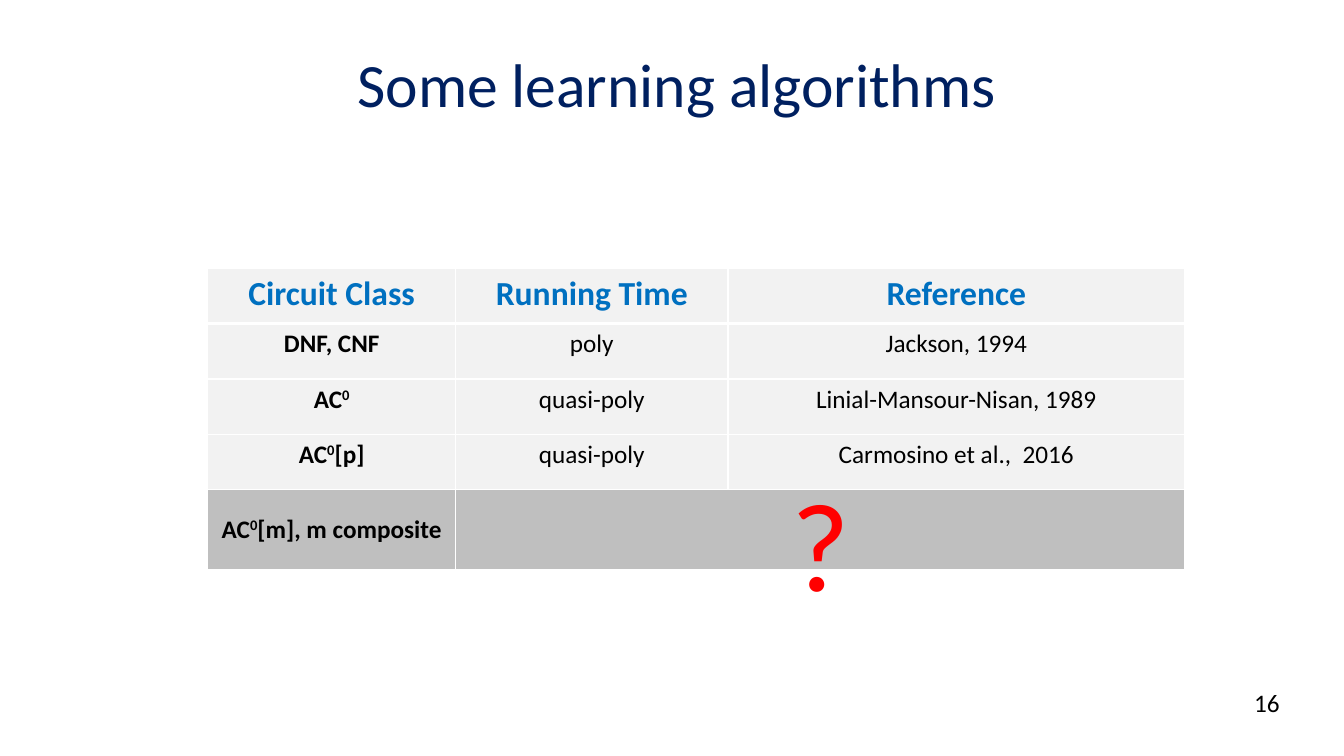
from lxml.etree import SubElement
from pptx import Presentation
from pptx.dml.color import RGBColor
from pptx.enum.text import MSO_ANCHOR as Anchor, PP_ALIGN as Align
from pptx.oxml.ns import qn
from pptx.util import Inches, Pt

COLORS = {
    "title": "002060",
    "heading": "0070C0",
    "text": "000000",
    "question": "FF0000",
    "row": "F2F2F2",
    "open_row": "BFBFBF",
    "border": "FFFFFF",
}
FONT = "Calibri"
HEADINGS = ["Circuit Class", "Running Time", "Reference"]
RESULTS = [
    [["DNF, CNF"], "poly", "Jackson, 1994"],
    [["AC", "0"], "quasi-poly", "Linial-Mansour-Nisan, 1989"],
    [["AC", "0", "[p]"], "quasi-poly", "Carmosino et al.,  2016"],
    [["AC", "0", "[m], m composite"], "", ""],
]
COLUMN_WIDTHS = [2.46, 2.7, 4.53]
ROW_HEIGHTS = [0.55] * 4 + [0.79]


def add_run(paragraph, text, size, color, bold=False, superscript=False):
    run = paragraph.add_run()
    run.text = text
    run.font.name = FONT
    run.font.size = Pt(size)
    run.font.bold = bold
    run.font.color.rgb = RGBColor.from_string(COLORS[color])
    if superscript:
        run._r.get_or_add_rPr().set("baseline", "30000")


def add_title(slide, left, top, width, height):
    title = slide.shapes.title
    title.left, title.top = Inches(left), Inches(top)
    title.width, title.height = Inches(width), Inches(height)
    title.text_frame.vertical_anchor = Anchor.TOP
    title.text_frame.word_wrap = True
    paragraph = title.text_frame.paragraphs[0]
    paragraph.alignment = Align.CENTER
    paragraph.line_spacing = 0.9
    add_run(paragraph, "Some learning algorithms", 44, "title")


def add_label(slide, text, size, color, left, top, width, height):
    label = slide.shapes.add_textbox(
        Inches(left), Inches(top), Inches(width), Inches(height)
    )
    label.text_frame.word_wrap = True
    add_run(label.text_frame.paragraphs[0], text, size, color)


def style_cell(cell, fill, top_width, bottom_width):
    cell.fill.solid()
    cell.fill.fore_color.rgb = RGBColor.from_string(COLORS[fill])
    properties = cell._tc.get_or_add_tcPr()
    widths = {"lnL": 1, "lnR": 1, "lnT": top_width, "lnB": bottom_width}
    for position, (side, width) in enumerate(widths.items()):
        border = SubElement(properties, qn(f"a:{side}"), w=str(Pt(width)))
        border_fill = SubElement(border, qn("a:solidFill"))
        SubElement(border_fill, qn("a:srgbClr"), val=COLORS["border"])
        properties.insert(position, border)


def add_algorithms_table(slide, left, top):
    table = slide.shapes.add_table(
        len(ROW_HEIGHTS), len(COLUMN_WIDTHS), Inches(left), Inches(top),
        Inches(sum(COLUMN_WIDTHS)), Inches(sum(ROW_HEIGHTS)),
    ).table
    table.horz_banding = False
    for column, width in zip(table.columns, COLUMN_WIDTHS):
        column.width = Inches(width)
    for row, height in zip(table.rows, ROW_HEIGHTS):
        row.height = Inches(height)

    last = len(RESULTS)
    for row_index, row in enumerate([HEADINGS] + RESULTS):
        is_header = row_index == 0
        size, color = (24, "heading") if is_header else (18, "text")
        for column_index, content in enumerate(row):
            cell = table.cell(row_index, column_index)
            style_cell(
                cell,
                "open_row" if row_index == last else "row",
                3 if row_index == 1 else 1,
                3 if is_header else 1,
            )
            paragraph = cell.text_frame.paragraphs[0]
            paragraph.alignment = Align.CENTER
            parts = [content] if isinstance(content, str) else content
            for part in filter(None, parts):
                add_run(paragraph, part, size, color,
                        bold=is_header or column_index == 0,
                        superscript=part == "0")
    table.cell(last, 0).vertical_anchor = Anchor.MIDDLE
    table.cell(last, 1).merge(table.cell(last, 2))


def build_algorithms_slide(presentation):
    slide = presentation.slides.add_slide(presentation.slide_layouts[5])
    add_title(slide, 1.86, 0.49, 9.71, 1.45)
    add_label(slide, "16", 18, "text", 12.34, 6.77, 0.71, 0.4)
    add_algorithms_table(slide, 2.06, 2.66)
    add_label(slide, "?", 90, "question", 7.75, 4.57, 0.91, 1.62)


def main():
    presentation = Presentation()
    presentation.slide_width = Inches(13.33)
    presentation.slide_height = Inches(7.5)
    build_algorithms_slide(presentation)
    presentation.save("out.pptx")


if __name__ == "__main__":
    main()
